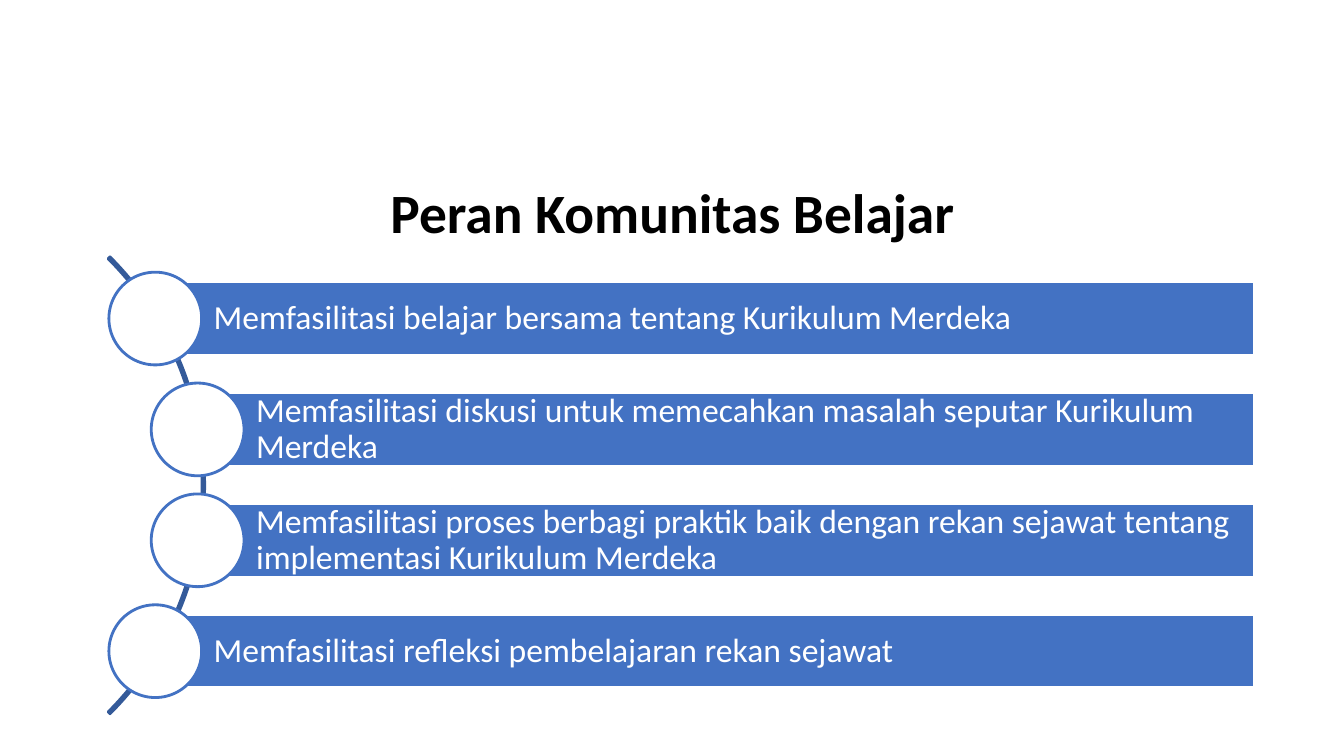
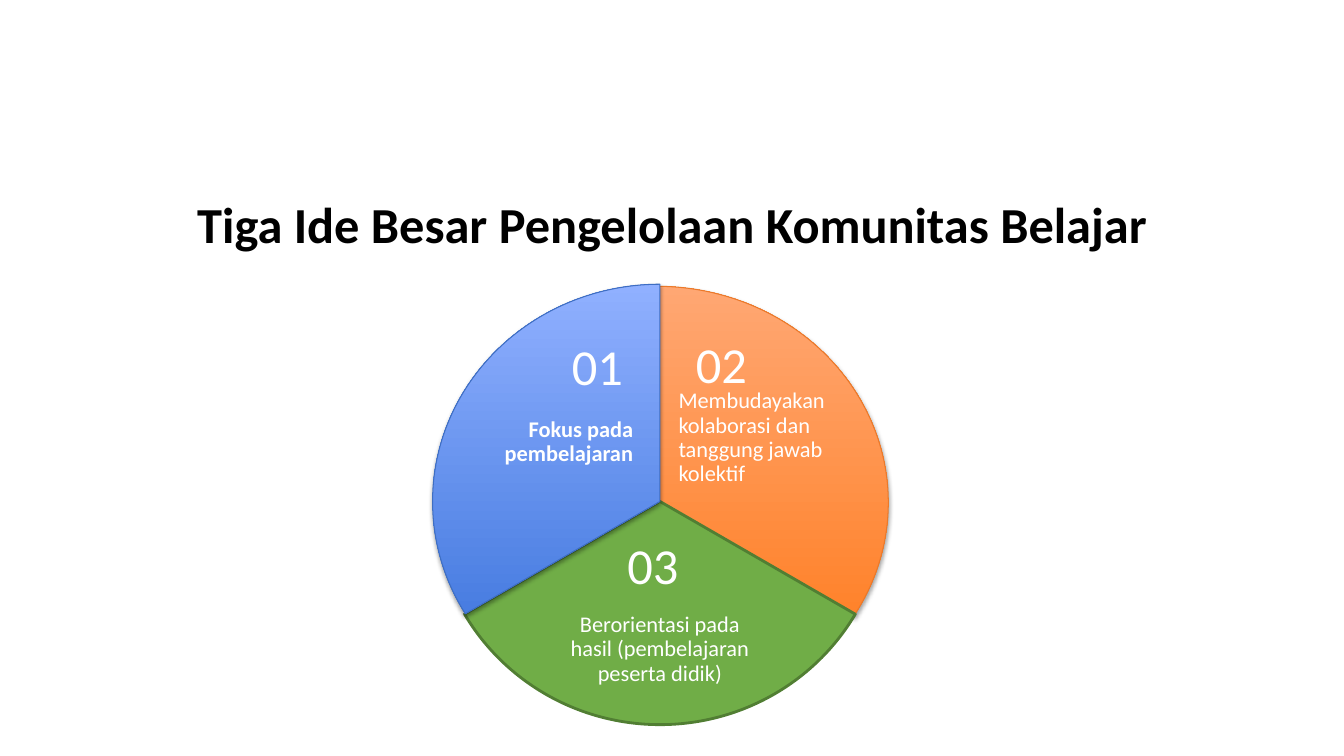
from lxml import etree
from pptx import Presentation
from pptx.dml.color import RGBColor
from pptx.enum.shapes import MSO_SHAPE as Preset
from pptx.enum.text import MSO_ANCHOR as Anchor, MSO_AUTO_SIZE as AutoSize, PP_ALIGN as Align
from pptx.oxml.ns import qn
from pptx.util import Inches, Pt

COLOURS = {
    "black": "000000", "white": "FFFFFF", "blue": "4372C3", "arc": "345A99",
    "orange low": "FF7714", "orange high": "FFA773", "orange edge": "EB792A",
    "blue low": "306CD7", "blue high": "90B0FF", "blue edge": "3E6EC2",
    "green": "70AD47", "green edge": "517E33",
}

ROLES = [
    ("Memfasilitasi belajar bersama tentang Kurikulum Merdeka", 0),
    ("Memfasilitasi diskusi untuk memecahkan masalah seputar Kurikulum Merdeka", 0.42),
    ("Memfasilitasi proses berbagi praktik baik dengan rekan sejawat tentang "
     "implementasi Kurikulum Merdeka", 0.42),
    ("Memfasilitasi refleksi pembelajaran rekan sejawat", 0),
]

SECTORS = [
    ((4.22, 2.84, 4.59, 4.29), 270, 30, ("orange low", "orange high"), "orange edge", 0.75),
    ((4.3, 2.76, 4.49, 4.43), 30, 150, ("green",), "green edge", 2),
    ((4.29, 2.82, 4.51, 4.31), 150, 270, ("blue low", "blue high"), "blue edge", 0.75),
]

IDEAS = [
    ("01", (5.44, 3.29), "Fokus pada pembelajaran",
     (4.77, 3.67, 1.53, 1.44), Align.RIGHT, True),
    ("02", (6.67, 3.28), "Membudayakan kolaborasi dan tanggung jawab kolektif",
     (6.71, 3.63, 1.56, 1.43), Align.LEFT, False),
    ("03", (5.99, 5.27), "Berorientasi pada hasil (pembelajaran peserta didik)",
     (5.53, 5.96, 2.03, 0.97), Align.CENTER, False),
]


def colour(name):
    """Return the named colour."""
    return RGBColor.from_string(COLOURS[name])


class Slides:
    """Hold the shared style and the slide being built."""

    font = "Calibri"

    def __init__(self):
        """Start an empty widescreen deck."""
        self.deck = Presentation()
        self.deck.slide_width = Inches(13.33)
        self.deck.slide_height = Inches(7.5)
        self.page = None

    def label(self, shape, text, size, align=Align.LEFT, bold=False, ink="white",
              anchor=Anchor.MIDDLE, insets=(0.1, 0.05, 0.1, 0.05), spacing=0.9):
        """Put one formatted paragraph in a shape."""
        frame = shape.text_frame
        frame.text = text
        frame.word_wrap = True
        frame.auto_size = AutoSize.NONE
        frame.vertical_anchor = anchor
        (frame.margin_left, frame.margin_top,
         frame.margin_right, frame.margin_bottom) = map(Inches, insets)
        para = frame.paragraphs[0]
        para.alignment = align
        para.line_spacing = spacing
        span = para.runs[0]
        span.font.name = self.font
        span.font.size = Pt(size)
        span.font.bold = bold
        span.font.color.rgb = colour(ink)

    def start(self, title, size, top, height):
        """Add a slide with its title."""
        self.page = self.deck.slides.add_slide(self.deck.slide_layouts[5])
        box = self.page.shapes.title
        box.left, box.top, box.width, box.height = map(Inches, (1.67, top, 10, height))
        self.label(box, title, size, Align.CENTER, True, "black", Anchor.BOTTOM)

    def shape(self, preset, place, fills, edge, width=2, adjust=()):
        """Add a preset shape with no, a plain or a gradient fill."""
        shape = self.page.shapes.add_shape(preset, *map(Inches, place))
        shape.shadow.inherit = False
        for index, value in enumerate(adjust):
            shape.adjustments[index] = value
        if len(fills) == 2:
            shape.fill.gradient()
            shape.fill.gradient_angle = 90
            for stop, name in zip(shape.fill.gradient_stops, fills):
                stop.color.rgb = colour(name)
        elif fills:
            shape.fill.solid()
            shape.fill.fore_color.rgb = colour(fills[0])
        else:
            shape.fill.background()
        shape.line.color.rgb = colour(edge)
        shape.line.width = Pt(width)
        return shape

    def text(self, text, place, size, **style):
        """Add a text box."""
        box = self.page.shapes.add_textbox(*map(Inches, place))
        self.label(box, text, size, **style)

    def shade(self, shape):
        """Give a shape a soft shadow below it."""
        effects = shape._element.spPr.find(qn("a:effectLst"))
        shadow = etree.SubElement(effects, qn("a:outerShdw"), blurRad="40000",
                                  dist="23000", dir="5400000", rotWithShape="0")
        tint = etree.SubElement(shadow, qn("a:srgbClr"), val=COLOURS["black"])
        etree.SubElement(tint, qn("a:alpha"), val="35000")

    def role(self, text, middle_x, middle_y):
        """Add a bar with a circle centred on its left end."""
        right, bar_height, diameter = 12.44, 0.73, 0.92
        bar = self.shape(Preset.RECTANGLE,
                         (middle_x, middle_y - bar_height / 2, right - middle_x, bar_height),
                         ("blue",), "white")
        self.label(bar, text, 24, insets=(0.58, 0.07, 0.07, 0.07))
        self.shape(Preset.OVAL,
                   (middle_x - diameter / 2, middle_y - diameter / 2, diameter, diameter),
                   ("white",), "blue")

    def sector(self, place, start, end, fills, edge, width):
        """Add a pie sector between two angles in degrees."""
        sector = self.shape(Preset.PIE, place, fills, edge, width,
                            (start * 0.6, end * 0.6))
        if len(fills) == 2:
            self.shade(sector)

    def idea(self, number, corner, text, place, align, bold):
        """Add the number and wording of one idea."""
        self.text(text, place, 16, align=align, bold=bold, insets=(0.02,) * 4)
        self.text(number, (*corner, 0.97, 0.66), 36, align=Align.CENTER, spacing=1)


def main():
    """Build and save the deck."""
    slides = Slides()

    slides.start("Peran Komunitas Belajar", 39.6, 1.75, 0.74)
    slides.shape(Preset.BLOCK_ARC, (-4.38, 1.61, 6.41, 6.41), (), "arc",
                 adjust=(315 * 0.6, 45 * 0.6, 0.004))
    for row, (text, indent) in enumerate(ROLES):
        slides.role(text, 1.54 + indent, 3.16 + 1.1 * row)

    slides.start("Tiga Ide Besar Pengelolaan Komunitas Belajar", 36, 1.6, 0.97)
    for sector in SECTORS:
        slides.sector(*sector)
    for idea in IDEAS:
        slides.idea(*idea)

    slides.deck.save("out.pptx")


if __name__ == "__main__":
    main()
